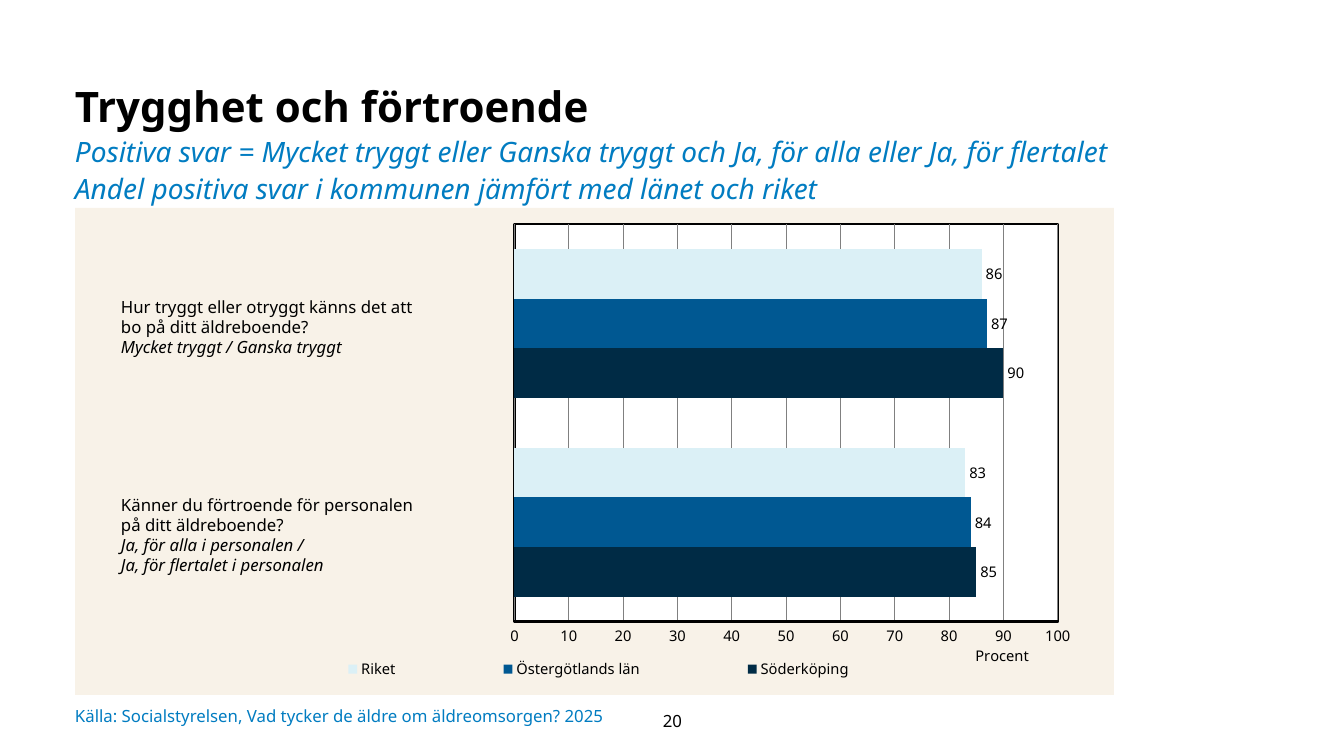
from lxml.etree import fromstring
from pptx import Presentation
from pptx.chart.data import CategoryChartData
from pptx.dml.color import RGBColor
from pptx.enum.chart import XL_CHART_TYPE as ChartType, XL_LABEL_POSITION as LabelPosition
from pptx.enum.chart import XL_LEGEND_POSITION as LegendPosition, XL_TICK_MARK as TickMark
from pptx.enum.text import MSO_ANCHOR as Anchor, PP_ALIGN as Align
from pptx.oxml.ns import nsdecls, qn
from pptx.util import Pt

PX = 914400 / 100.8
FONT = "Noto Sans"
COLORS = {
    "black": "000000", "white": "FFFFFF", "grid": "808080", "accent": "017CC1",
    "panel": "F8F2E8", "navy": "002B45", "blue": "005892", "pale": "DBF0F6",
}


def add_text(page, place, paras, insets=(0, 0, 0, 0), anchor=Anchor.TOP, align=Align.LEFT):
    """Each paragraph is (text, exact line height or None, font format values)."""
    box = page.shapes.add_textbox(*(round(value * PX) for value in place))
    frame = box.text_frame
    frame.word_wrap = True
    frame.vertical_anchor = anchor
    for side, inset in zip(("left", "top", "right", "bottom"), insets):
        setattr(frame, f"margin_{side}", round(inset * PX))
    for index, (text, height, style) in enumerate(paras):
        para = frame.paragraphs[0] if index == 0 else frame.add_paragraph()
        para.alignment = align
        if height:
            para.line_spacing = Pt(height)
        para.text = text
        for span in para.runs:
            values = {"name": FONT, "size": Pt(12), "color": "black"} | style
            span.font.color.rgb = RGBColor.from_string(COLORS[values.pop("color")])
            for name, value in values.items():
                setattr(span.font, name, value)


def set_layout(element, index, target="", **fractions):
    """Place a chart part by fractions of the chart area."""
    for old in element.findall(qn("c:layout")):
        element.remove(old)
    modes = "".join(f'<c:{key}Mode val="edge"/>' for key in "xy")
    sizes = "".join(f'<c:{key} val="{value}"/>' for key, value in fractions.items())
    element.insert(index, fromstring(
        f'<c:layout {nsdecls("c")}><c:manualLayout>{target}{modes}{sizes}'
        "</c:manualLayout></c:layout>"))


deck = Presentation()
deck.slide_width, deck.slide_height = round(1344 * PX), round(756 * PX)
page = deck.slides.add_slide(deck.slide_layouts[6])

# Heading
add_text(page, (75, 73, 1063, 128), [
    ("Trygghet och förtroende", 41.5, {"size": Pt(30), "bold": True}),
    ("Positiva svar = Mycket tryggt eller Ganska tryggt och Ja, för alla eller Ja, för flertalet\v"
     "Andel positiva svar i kommunen jämfört med länet och riket", 26.4,
     {"size": Pt(20), "italic": True, "color": "accent"}),
], insets=(0, 0, 10, 5))

# Chart
series_list = [
    ("Söderköping", (85, 90), "navy"),
    ("Östergötlands län", (84, 87), "blue"),
    ("Riket", (83, 86), "pale"),
]
data = CategoryChartData()
data.categories = ["1", "2"]
for name, values, _ in series_list:
    data.add_series(name, values)
place = (round(value * PX) for value in (75, 208, 1039, 487))
chart = page.shapes.add_chart(ChartType.BAR_CLUSTERED, *place, data).chart
chart.has_title = False
chart.font.name = FONT
chart.font.size = Pt(10.5)
chart.font.color.rgb = RGBColor.from_string(COLORS["black"])

plot = chart.plots[0]
plot.gap_width = 100
plot.overlap = 0
plot.vary_by_categories = False
plot.has_data_labels = True
plot.data_labels.show_value = True
plot.data_labels.position = LabelPosition.OUTSIDE_END
for series, (_, _, color) in zip(plot.series, series_list):
    series.format.fill.solid()
    series.format.fill.fore_color.rgb = RGBColor.from_string(COLORS[color])

chart.category_axis.visible = False
axis = chart.value_axis
axis.minimum_scale, axis.maximum_scale, axis.major_unit = 0, 100, 10
axis.major_tick_mark = axis.minor_tick_mark = TickMark.NONE
axis.has_major_gridlines = True
for line, color, width in ((axis.format.line, "black", 2),
                           (axis.major_gridlines.format.line, "grid", 0.75)):
    line.color.rgb = RGBColor.from_string(COLORS[color])
    line.width = Pt(width)
axis.has_title = True
axis.axis_title.text_frame.text = "Procent"
unit_font = axis.axis_title.text_frame.paragraphs[0].runs[0].font
unit_font.name, unit_font.size, unit_font.bold = FONT, Pt(10.5), False
unit_font.color.rgb = RGBColor.from_string(COLORS["black"])

chart.has_legend = True
chart.legend.position = LegendPosition.BOTTOM
chart.legend.include_in_layout = False
chart.legend.font.name = FONT
chart.legend.font.size = Pt(10.5)

chart_root = chart.element.find(qn("c:chart"))
plot_area = chart_root.find(qn("c:plotArea"))
set_layout(plot_area, 0, '<c:layoutTarget val="inner"/>', x=0.423, y=0.033, w=0.523, h=0.817)
set_layout(chart_root.find(qn("c:legend")), 1, x=0.164, y=0.915, w=0.68, h=0.064)
set_layout(plot_area.find(".//" + qn("c:title")), 1, x=0.864, y=0.89)

panel_fill, plot_fill = (
    fromstring(f'<c:spPr {nsdecls("c", "a")}><a:solidFill><a:srgbClr val="{COLORS[color]}"/>'
               f"</a:solidFill>{outline}</c:spPr>")
    for color, outline in (
        ("panel", "<a:ln><a:noFill/></a:ln>"),
        ("white", f'<a:ln w="{Pt(1.5)}"><a:solidFill><a:srgbClr val="{COLORS["black"]}"/>'
                  "</a:solidFill></a:ln>")))
chart_root.addnext(panel_fill)
plot_area.append(plot_fill)

# Questions beside the bars
questions = [
    ((111, 292, 312, 89), "Hur tryggt eller otryggt känns det att bo på ditt äldreboende?",
     ["Mycket tryggt / Ganska tryggt"]),
    ((111, 490, 329, 110), "Känner du förtroende för personalen på ditt äldreboende?",
     ["Ja, för alla i personalen /", "Ja, för flertalet i personalen"]),
]
for place, question, answers in questions:
    paras = [(question, 14.3, {})] + [(answer, 14.3, {"italic": True}) for answer in answers]
    add_text(page, place, paras, insets=(10, 5, 10, 5))

# Source and page number
add_text(page, (75, 701, 557, 29),
         [("Källa: Socialstyrelsen, Vad tycker de äldre om äldreomsorgen? 2025", None,
           {"color": "accent"})], anchor=Anchor.MIDDLE)
add_text(page, (621, 701, 103, 40), [("20", None, {})], insets=(10, 5, 10, 5),
         anchor=Anchor.MIDDLE, align=Align.CENTER)

deck.save("out.pptx")
